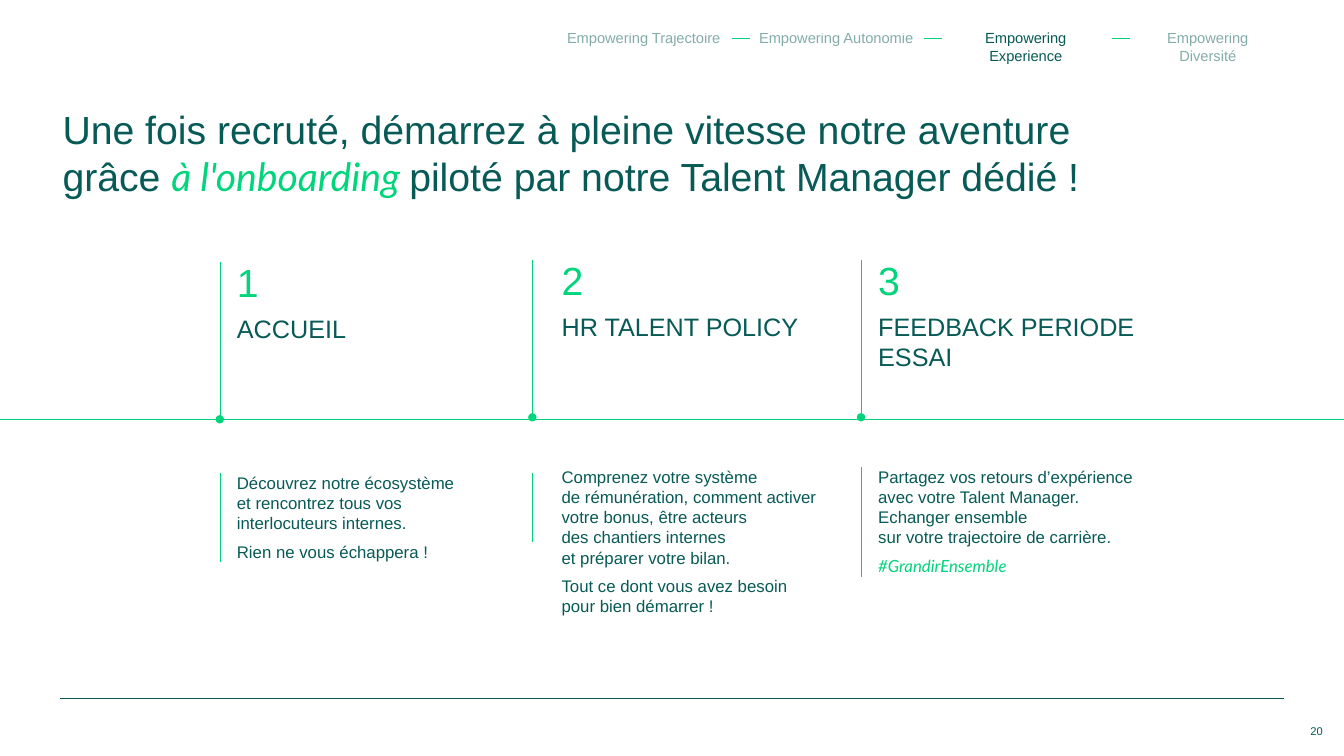
from dataclasses import dataclass

from lxml import etree
from pptx import Presentation
from pptx.dml.color import RGBColor
from pptx.enum.shapes import MSO_CONNECTOR
from pptx.enum.text import MSO_ANCHOR, MSO_AUTO_SIZE, PP_ALIGN
from pptx.oxml.ns import qn
from pptx.util import Inches, Pt

COLORS = {"dark": "075A56", "green": "00D57C"}


@dataclass
class Line:
    text: str
    size: float
    color: str = "dark"
    font: str = "Arial"
    italic: bool = False
    align: PP_ALIGN = PP_ALIGN.LEFT
    after: float = 0


@dataclass
class Step:
    number: str
    name: str
    details: list[Line]
    rule_x: float
    text_x: float
    width: float
    head_y: float
    body_y: float
    rule_height: float


@dataclass
class Chapter:
    name: str
    x: float
    width: float
    active: bool = False


def style(font, line: Line) -> None:
    font.size, font.name, font.italic = Pt(line.size), line.font, line.italic
    font.color.rgb = RGBColor.from_string(COLORS[line.color])


def add_text(slide, x: float, y: float, width: float, height: float,
             lines: list[Line], inset: float = 0, wrap: bool = True):
    frame = slide.shapes.add_textbox(
        Inches(x), Inches(y), Inches(width), Inches(height)).text_frame
    frame.word_wrap = wrap
    frame.margin_left = frame.margin_right = Inches(inset)
    frame.margin_top = frame.margin_bottom = Inches(inset)
    for index, line in enumerate(lines):
        paragraph = frame.add_paragraph() if index else frame.paragraphs[0]
        paragraph.text = line.text
        paragraph.alignment = line.align
        paragraph.space_after = Pt(line.after)
        style(paragraph.font, line)
    return frame


def add_rule(slide, x1: float, y1: float, x2: float, y2: float,
             weight: float = 0.25, color: str = "green", dot: bool = False) -> None:
    rule = slide.shapes.add_connector(
        MSO_CONNECTOR.STRAIGHT, Inches(x1), Inches(y1), Inches(x2), Inches(y2))
    rule.line.color.rgb = RGBColor.from_string(COLORS[color])
    rule.line.width = Pt(weight)
    properties = rule._element.spPr
    if dot:
        etree.SubElement(properties.find(qn("a:ln")), qn("a:tailEnd"), type="oval")
    etree.SubElement(properties, qn("a:effectLst"))


def add_title(slide) -> None:
    title = slide.shapes.title
    title.left, title.top = Inches(0.62), Inches(1.04)
    title.width, title.height = Inches(11.51), Inches(1.43)
    frame = title.text_frame
    frame.auto_size = MSO_AUTO_SIZE.NONE
    frame.vertical_anchor = MSO_ANCHOR.TOP
    frame.margin_left = frame.margin_right = 0
    frame.margin_top = frame.margin_bottom = 0
    paragraph = frame.paragraphs[0]
    paragraph.alignment = PP_ALIGN.LEFT
    paragraph.space_before = Pt(0)
    style(paragraph.font, Line("", 28))
    paragraph.text = "Une fois recruté, démarrez à pleine vitesse notre aventure\ngrâce "
    for part in (Line("à l'onboarding ", 28, "green", "Lato", True),
                 Line("piloté par notre Talent Manager dédié !", 28)):
        run = paragraph.add_run()
        run.text = part.text
        style(run.font, part)
    for run in (paragraph.runs[0], paragraph.runs[1]):
        style(run.font, Line("", 28))


def add_chapter(slide, chapter: Chapter) -> None:
    label = Line(chapter.name, 10.5, align=PP_ALIGN.CENTER)
    frame = add_text(slide, chapter.x, 0.24, chapter.width, 0.28, [label], 0.05)
    if not chapter.active:
        for color in frame.paragraphs[0]._p.iter(qn("a:srgbClr")):
            etree.SubElement(color, qn("a:alpha"), val="50000")


def add_step(slide, step: Step) -> None:
    # Number and name above the timeline
    heading = [Line(step.number, 28, "green", after=6), Line(step.name, 18, after=6)]
    add_text(slide, step.text_x, step.head_y, step.width, 1.06, heading)
    rule_y = step.head_y + 0.04
    add_rule(slide, step.rule_x, rule_y, step.rule_x, rule_y + 1.56, dot=True)
    # Details below it
    add_text(slide, step.text_x, step.body_y, step.width, 1.5, step.details)
    rule_y = 4.69 if step.number == "2" else step.body_y
    add_rule(slide, step.rule_x, rule_y, step.rule_x, rule_y + step.rule_height)


CHAPTERS = [
    Chapter("Empowering Trajectoire", 5.54, 1.69),
    Chapter("Empowering Autonomie", 7.46, 1.67),
    Chapter("Empowering Experience", 9.36, 1.63, active=True),
    Chapter("Empowering Diversité", 11.23, 1.5),
]

STEPS = [
    Step("1", "ACCUEIL", [
        Line("Découvrez notre écosystème\net rencontrez tous vos interlocuteurs internes.",
             12, after=6),
        Line("Rien ne vous échappera !", 12, after=6),
    ], 2.18, 2.35, 2.56, 2.56, 4.69, 0.89),
    Step("2", "HR TALENT POLICY", [
        Line("Comprenez votre système\nde rémunération, comment activer votre bonus, "
             "être acteurs\ndes chantiers internes\net préparer votre bilan.", 12, after=6),
        Line("Tout ce dont vous avez besoin\npour bien démarrer !", 12, after=6),
    ], 5.28, 5.57, 2.59, 2.54, 4.63, 0.69),
    Step("3", "FEEDBACK PERIODE ESSAI", [
        Line("Partagez vos retours d’expérience avec votre Talent Manager.\n"
             "Echanger ensemble\nsur votre trajectoire de carrière.", 12, after=6),
        Line("#GrandirEnsemble", 12, "green", "Lato", True, after=6),
    ], 8.54, 8.71, 2.59, 2.54, 4.63, 1.09),
]


def main() -> None:
    deck = Presentation()
    deck.slide_width, deck.slide_height = Inches(13.33), Inches(7.5)
    slide = deck.slides.add_slide(deck.slide_layouts[5])

    add_title(slide)

    # Chapter navigation, with a dash before every chapter but the first
    for chapter in CHAPTERS:
        add_chapter(slide, chapter)
    for chapter in CHAPTERS[1:]:
        add_rule(slide, chapter.x - 0.2, 0.38, chapter.x - 0.02, 0.38)

    # Timeline
    add_rule(slide, 0, 4.16, 13.33, 4.16, 0.5)
    for step in STEPS:
        add_step(slide, step)

    # Footer
    add_rule(slide, 0.6, 6.93, 12.73, 6.93, 0.82, "dark")
    add_text(slide, 12.93, 7.19, 0.19, 0.13,
             [Line("20", 8, align=PP_ALIGN.RIGHT)], wrap=False)

    deck.save("out.pptx")


if __name__ == "__main__":
    main()
